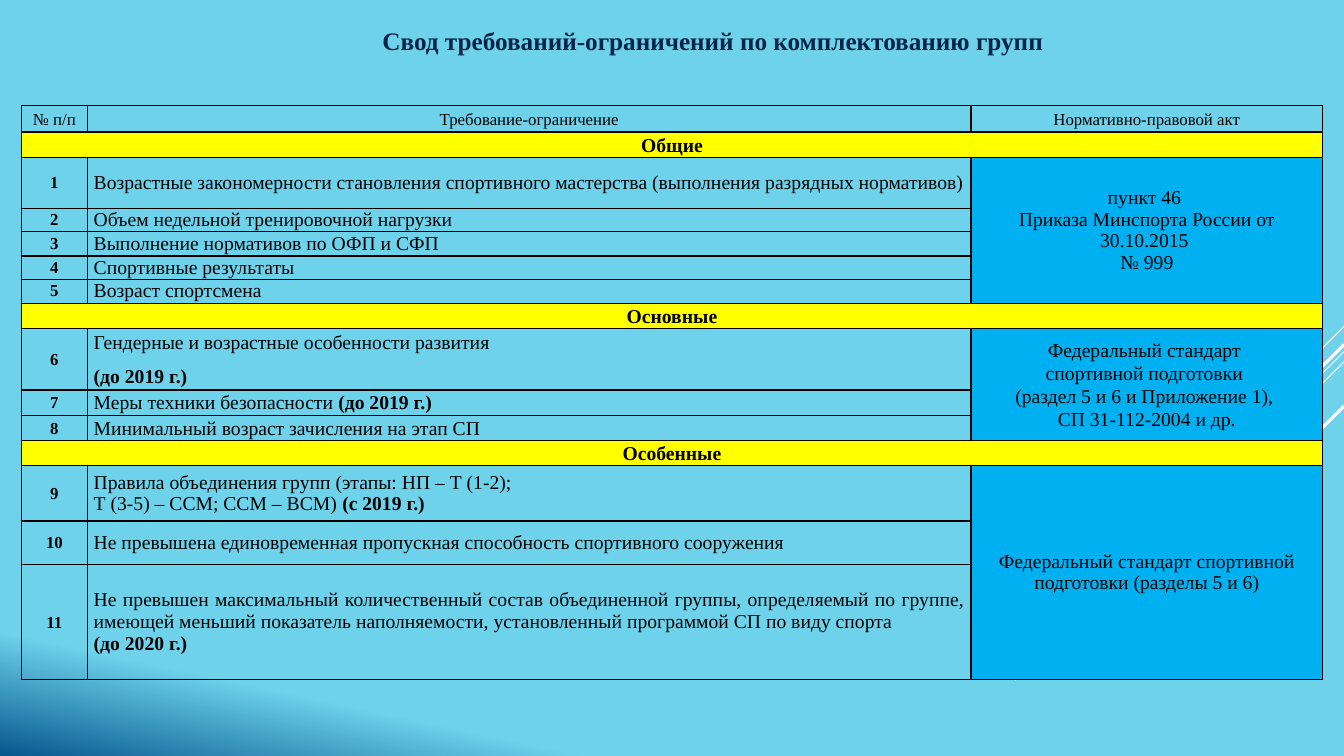
from lxml import etree
from pptx import Presentation
from pptx.dml.color import RGBColor
from pptx.enum.shapes import MSO_CONNECTOR
from pptx.enum.text import MSO_ANCHOR, MSO_AUTO_SIZE, PP_ALIGN
from pptx.oxml.ns import qn
from pptx.util import Inches, Pt

CENTER, LEFT, JUSTIFY = PP_ALIGN.CENTER, PP_ALIGN.LEFT, PP_ALIGN.JUSTIFY
MIDDLE, TOP = MSO_ANCHOR.MIDDLE, MSO_ANCHOR.TOP
STRAIGHT = MSO_CONNECTOR.STRAIGHT
NO_AUTOFIT = MSO_AUTO_SIZE.NONE

COLORS = {
    "sky": "6ED2EB", "deep": "06588E", "navy": "042349", "black": "000000",
    "white": "FFFFFF", "section": "FFFF00", "act": "00B0F0",
}
FONT = "Times New Roman"
TITLE_ONLY = 5
SLIDE_WIDTH, SLIDE_HEIGHT = 13.33, 7.5

TIGHT = {"line_spacing": 1.0, "space_after": Pt(0)}
LOOSE = {"line_spacing": 1.07, "space_after": Pt(0)}
SPACED = {"line_spacing": 1.07, "space_after": Pt(8)}

# Each paragraph is a list of (text, bold) runs.
HEADINGS = ["№ п/п", "Требование-ограничение", "Нормативно-правовой акт"]
SECTIONS = [
    {
        "name": "Общие", "number": TIGHT, "requirement": {"alignment": JUSTIFY, **TIGHT},
        "act_format": TIGHT,
        "act": ["пункт 46 ", "Приказа Минспорта России от 30.10.2015 ", "№ 999"],
        "items": [
            [[("Возрастные закономерности становления спортивного мастерства "
               "(выполнения разрядных нормативов)", False)]],
            [[("Объем недельной тренировочной нагрузки", False)]],
            [[("Выполнение нормативов по ОФП и СФП", False)]],
            [[("Спортивные результаты", False)]],
            [[("Возраст спортсмена", False)]],
        ],
    },
    {
        "name": "Основные", "number": SPACED, "requirement": {"alignment": LEFT, **SPACED},
        "act_format": LOOSE,
        "act": ["Федеральный стандарт ", "спортивной подготовки ",
                "(раздел 5 и 6 и Приложение 1), ", "СП 31-112-2004 и др."],
        "items": [
            [[("Гендерные и возрастные особенности развития", False)],
             [("(до 2019 г.)", True)]],
            [[("Меры техники безопасности ", False), ("(до 2019 г.)", True)]],
            [[("Минимальный возраст зачисления на этап СП", False)]],
        ],
    },
    {
        "name": "Особенные", "number": SPACED, "requirement": {"alignment": JUSTIFY, **TIGHT},
        "act_format": TIGHT,
        "act": ["Федеральный стандарт спортивной подготовки (разделы 5 и 6)"],
        "items": [
            [[("Правила объединения групп (этапы: НП – Т (1-2);", False)],
             [("Т (3-5) – ССМ; ССМ – ВСМ) ", False), ("(с 2019 г.)", True)]],
            [[("Не превышена единовременная пропускная способность "
               "спортивного сооружения", False)]],
            [[("Не превышен максимальный количественный состав объединенной группы, "
               "определяемый по группе, имеющей меньший показатель наполняемости, "
               "установленный программой СП по виду спорта ", False)],
             [("(до 2020 г.)", True)]],
        ],
    },
]
COLUMN_WIDTHS = [0.66, 8.76, 3.49]
ROW_HEIGHTS = [0.26, 0.25, 0.51, 0.23, 0.24, 0.23, 0.24, 0.25,
               0.61, 0.25, 0.25, 0.25, 0.55, 0.43, 1.14]

# Diagonals from the right edge: start height, length along each axis, width in points.
DIAGONALS = [(3.24, 1.0, 0.75), (3.49, 3.26, 0.75), (3.59, 2.07, 0.75),
             (3.42, 1.91, 2.25), (4.03, 1.39, 2.25)]


def color(name):
    return RGBColor.from_string(COLORS[name])


def set_attributes(target, values):
    for name, value in values.items():
        setattr(target, name, value)


def write_paragraphs(text_frame, paragraphs, size, paragraph_format, color_name="black"):
    for index, runs in enumerate(paragraphs):
        paragraph = text_frame.add_paragraph() if index else text_frame.paragraphs[0]
        set_attributes(paragraph, {"alignment": CENTER, "space_before": Pt(0),
                                   **paragraph_format})
        for text, bold in runs:
            run = paragraph.add_run()
            run.text = text
            set_attributes(run.font, {"name": FONT, "size": Pt(size), "bold": bold})
            run.font.color.rgb = color(color_name)


def add_borders(cell):
    """Draw a black one-point line on all four sides; the lines precede the fill."""
    properties = cell._tc.get_or_add_tcPr()
    for position, side in enumerate(("lnL", "lnR", "lnT", "lnB")):
        line = etree.Element(qn(f"a:{side}"), w=str(Pt(1)))
        fill = etree.SubElement(line, qn("a:solidFill"))
        etree.SubElement(fill, qn("a:srgbClr"), val=COLORS["black"])
        properties.insert(position, line)


def fill_cell(cell, color_name):
    cell.fill.solid()
    cell.fill.fore_color.rgb = color(color_name)


def paint_background(slide):
    fill = slide.background.fill
    fill.gradient()
    fill.gradient_angle = 258
    for stop, (position, name) in zip(fill.gradient_stops, [(0.88, "sky"), (1, "deep")]):
        stop.position = position
        stop.color.rgb = color(name)


def add_diagonals(slide, right):
    for top, length, width in DIAGONALS:
        connector = slide.shapes.add_connector(
            STRAIGHT, Inches(right), Inches(top), Inches(right - length), Inches(top + length))
        connector.line.color.rgb = color("white")
        connector.line.width = Pt(width)
        etree.SubElement(connector._element.spPr, qn("a:effectLst"))


def add_title(slide, left, top, width, height):
    title = slide.shapes.title
    set_attributes(title, {"left": Inches(left), "top": Inches(top),
                           "width": Inches(width), "height": Inches(height)})
    set_attributes(title.text_frame, {"word_wrap": True, "vertical_anchor": TOP,
                                      "auto_size": NO_AUTOFIT})
    write_paragraphs(title.text_frame,
                     [[("Свод требований-ограничений по комплектованию групп", True)]],
                     18, SPACED, "navy")


def add_section(table, row, section, first_number):
    """Write a section from the given row on and return the row after it."""
    banner = table.cell(row, 0)
    banner.merge(table.cell(row, 2))
    fill_cell(banner, "section")
    write_paragraphs(banner.text_frame, [[(section["name"], True)]], 14, SPACED)

    first_row, next_row = row + 1, row + 1 + len(section["items"])
    for offset, paragraphs in enumerate(section["items"]):
        number, requirement = (table.cell(first_row + offset, column) for column in (0, 1))
        write_paragraphs(number.text_frame, [[(str(first_number + offset), True)]],
                         12, section["number"])
        write_paragraphs(requirement.text_frame, paragraphs, 14, section["requirement"])

    act = table.cell(first_row, 2)
    act.merge(table.cell(next_row - 1, 2))
    fill_cell(act, "act")
    write_paragraphs(act.text_frame, [[(line, False)] for line in section["act"]],
                     14, section["act_format"])
    return next_row


def add_requirements_table(slide, left, top):
    table = slide.shapes.add_table(
        len(ROW_HEIGHTS), len(COLUMN_WIDTHS), Inches(left), Inches(top),
        Inches(sum(COLUMN_WIDTHS)), Inches(sum(ROW_HEIGHTS))).table
    set_attributes(table, {"first_row": False, "horz_banding": False})
    for column, width in zip(table.columns, COLUMN_WIDTHS):
        column.width = Inches(width)
    for row, height in zip(table.rows, ROW_HEIGHTS):
        row.height = Inches(height)
    for cell in table.iter_cells():
        set_attributes(cell, {"margin_left": Inches(0.06), "margin_right": Inches(0.06),
                              "margin_top": 0, "margin_bottom": 0,
                              "vertical_anchor": MIDDLE})
        cell.fill.background()
        add_borders(cell)

    for column, heading in enumerate(HEADINGS):
        write_paragraphs(table.cell(0, column).text_frame, [[(heading, False)]], 12, SPACED)
    row, number = 1, 1
    for section in SECTIONS:
        row = add_section(table, row, section, number)
        number += len(section["items"])


def main():
    presentation = Presentation()
    presentation.slide_width = Inches(SLIDE_WIDTH)
    presentation.slide_height = Inches(SLIDE_HEIGHT)
    slide = presentation.slides.add_slide(presentation.slide_layouts[TITLE_ONLY])
    paint_background(slide)
    add_diagonals(slide, SLIDE_WIDTH)
    add_title(slide, 1.53, 0.18, 11.08, 0.41)
    add_requirements_table(slide, 0.21, 1.05)
    presentation.save("out.pptx")


if __name__ == "__main__":
    main()
